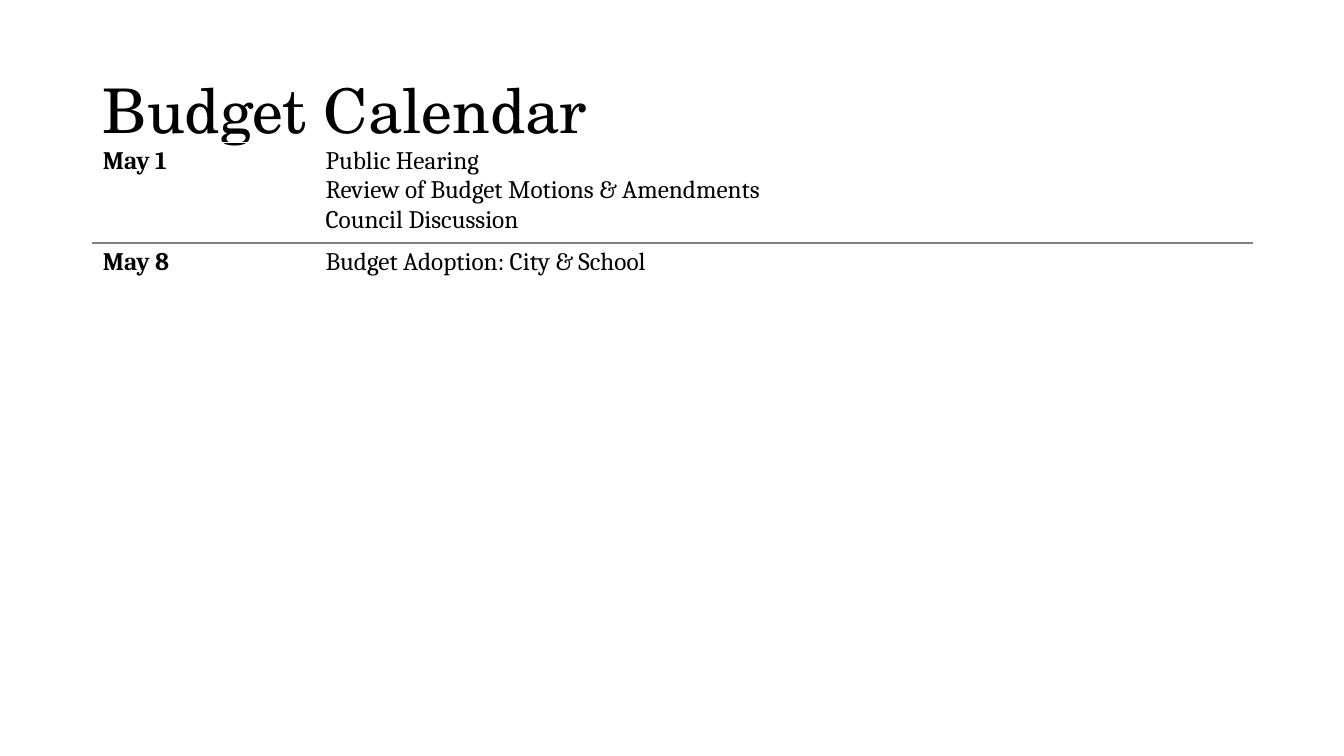
from lxml.etree import SubElement
from pptx import Presentation
from pptx.dml.color import RGBColor
from pptx.enum.text import MSO_ANCHOR
from pptx.oxml.ns import qn
from pptx.util import Inches, Pt

BLACK = RGBColor(0x00, 0x00, 0x00)
GRAY = RGBColor(0x80, 0x80, 0x80)

EVENTS = [
    ("May 1", ["Public Hearing", "Review of Budget Motions & Amendments", "Council Discussion"]),
    ("May 8", ["Budget Adoption: City & School"]),
]


def add_run(p, text, font, size, bold=False):
    r = p.add_run()
    r.text = text
    r.font.name = font
    r.font.size = Pt(size)
    r.font.bold = bold
    r.font.color.rgb = BLACK


def add_border(cell, side):
    tc_pr = cell._tc.get_or_add_tcPr()
    ln = SubElement(tc_pr, qn(f"a:{side}"), w=str(Pt(1.5)))
    fill = SubElement(ln, qn("a:solidFill"))
    SubElement(fill, qn("a:srgbClr"), val=str(GRAY))
    tc_pr.insert(0, ln)


prs = Presentation()
prs.slide_width = Inches(13.33)
prs.slide_height = Inches(7.5)
s = prs.slides.add_slide(prs.slide_layouts[6])

title = s.shapes.add_textbox(Inches(0.92), Inches(0.4), Inches(11.5), Inches(1.45))
tf = title.text_frame
tf.word_wrap = True
tf.vertical_anchor = MSO_ANCHOR.MIDDLE
p = tf.paragraphs[0]
p.line_spacing = 0.9
add_run(p, "Budget Calendar", "TeX Gyre Schola", 44)

frame = s.shapes.add_table(len(EVENTS), 2, Inches(0.92), Inches(1.41), Inches(11.5), Inches(0.82))
calendar = frame.table
calendar.first_row = False
calendar.horz_banding = False
for column, width in zip(calendar.columns, (2.21, 9.29)):
    column.width = Inches(width)

for i, (date, items) in enumerate(EVENTS):
    for j, lines in enumerate(([date], items)):
        cell = calendar.cell(i, j)
        cell.fill.background()
        add_border(cell, "lnB" if i == 0 else "lnT")
        tf = cell.text_frame
        for k, line in enumerate(lines):
            p = tf.paragraphs[0] if k == 0 else tf.add_paragraph()
            add_run(p, line, "Cambria", 18, bold=j == 0)

prs.save("out.pptx")
